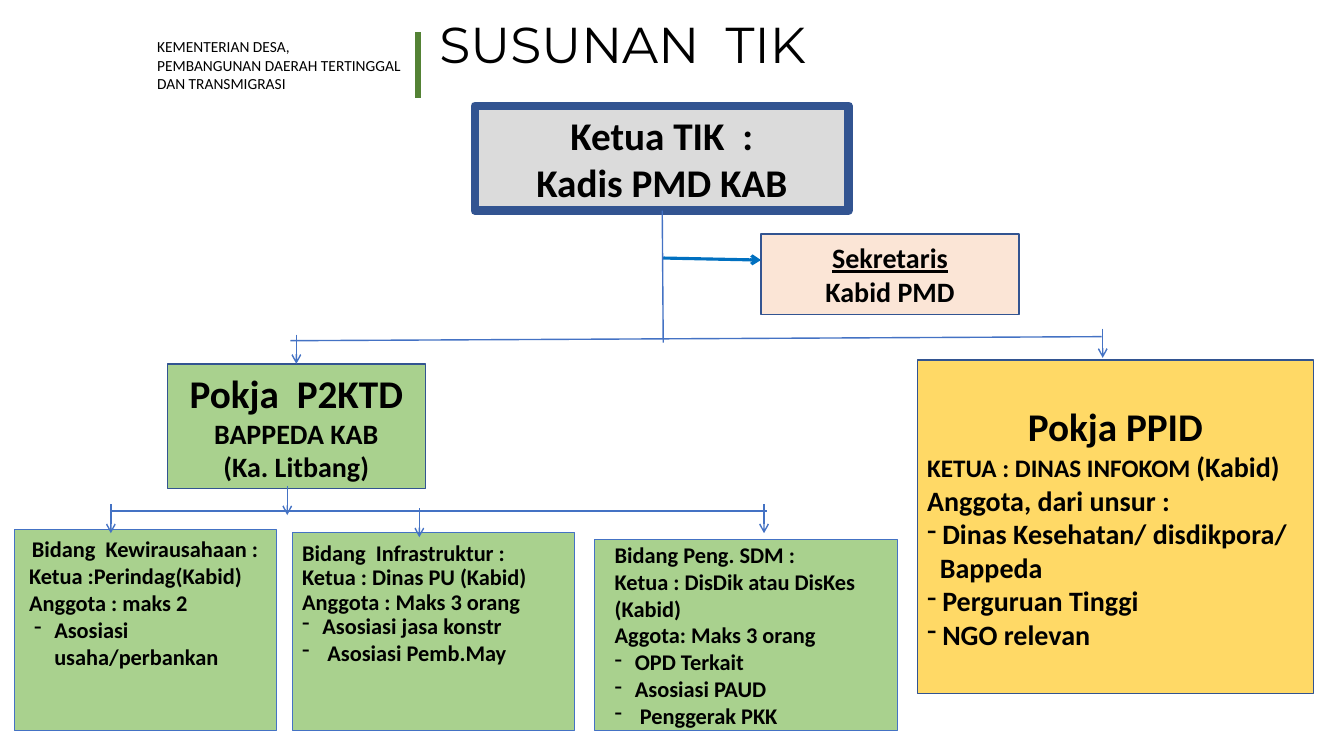
"""Build the TIK organisation chart slide."""
from lxml.etree import SubElement
from pptx import Presentation
from pptx.dml.color import RGBColor
from pptx.enum.shapes import MSO_CONNECTOR, MSO_SHAPE
from pptx.enum.text import MSO_ANCHOR, MSO_AUTO_SIZE, PP_ALIGN
from pptx.oxml.ns import qn
from pptx.util import Inches, Pt

RECTANGLE = MSO_SHAPE.RECTANGLE
STRAIGHT = MSO_CONNECTOR.STRAIGHT
MIDDLE = MSO_ANCHOR.MIDDLE
LEFT, CENTER = PP_ALIGN.LEFT, PP_ALIGN.CENTER

BLACK = RGBColor(0x00, 0x00, 0x00)
GRAY = RGBColor(0xDB, 0xDB, 0xDB)
PEACH = RGBColor(0xFB, 0xE5, 0xD6)
YELLOW = RGBColor(0xFF, 0xD9, 0x66)
GREEN = RGBColor(0xA9, 0xD1, 0x8E)
DARK_GREEN = RGBColor(0x54, 0x82, 0x35)
NAVY = RGBColor(0x32, 0x54, 0x91)
BLUE = RGBColor(0x44, 0x72, 0xC4)
BRIGHT_BLUE = RGBColor(0x00, 0x70, 0xC0)

deck = Presentation()
deck.slide_width, deck.slide_height = Inches(13.333), Inches(7.5)
COL = deck.slide_width / 40
ROW = deck.slide_height / 30
slide = deck.slides.add_slide(deck.slide_layouts[5])


def write(frame, text, size=16, font="Calibri", bold=True, underline=False,
          align=LEFT, indent=0, hang=0, spacing=1.0, bullet=False, join=False):
    """Add a paragraph, or a run joined to the last paragraph."""
    paragraph = frame.paragraphs[-1]
    if paragraph.runs and not join:
        paragraph = frame.add_paragraph()
    if not join:
        paragraph.alignment = align
        paragraph.line_spacing = spacing
        properties = paragraph._p.get_or_add_pPr()
        properties.set("marL", str(int(indent * COL)))
        properties.set("indent", str(int(-hang * COL)))
        if bullet:
            SubElement(properties, qn("a:buChar"), char="-")
    run = paragraph.add_run()
    run.text = text
    run.font.size = Pt(size)
    run.font.name = font
    run.font.bold = bold
    run.font.underline = underline
    run.font.color.rgb = BLACK


title = slide.shapes.title
title.left, title.top = int(12.39 * COL), int(0.64 * ROW)
title.width, title.height = int(26.7 * COL), int(2.44 * ROW)
title.text_frame.auto_size = MSO_AUTO_SIZE.NONE
title.text_frame.vertical_anchor = MIDDLE
write(title.text_frame, "SUSUNAN  TIK", size=36, font="Montserrat", bold=False,
      indent=0.39, spacing=0.9)

ministry = slide.shapes.add_textbox(
    int(4.38 * COL), int(1.28 * ROW), int(8.04 * COL), int(2.64 * ROW)).text_frame
ministry.word_wrap = True
for name in ("KEMENTERIAN DESA,", "PEMBANGUNAN DAERAH TERTINGGAL DAN TRANSMIGRASI"):
    write(ministry, name, size=11, bold=False)

HEADING = dict(size=28, align=CENTER)
ROLE = dict(size=20, align=CENTER)
MEMBER = dict(size=20)
MEMBER_ITEM = dict(size=20, indent=0.45, hang=0.45, bullet=True)
TIGHT = dict(spacing=0.9)
ITEM = dict(indent=0.9, hang=0.6, bullet=True)
FLUSH_ITEM = dict(indent=0.6, hang=0.6, bullet=True)

boxes = [
    ((14.13, 4.2, 11.13, 4.16), GRAY, NAVY, 6, 0.2, [
        ("Ketua TIK  :", HEADING),
        ("Kadis PMD KAB", HEADING)]),
    ((22.65, 9.28, 7.68, 3.2), PEACH, NAVY, 1, 0.2, [
        ("Sekretaris", dict(ROLE, underline=True)),
        ("Kabid PMD", ROLE)]),
    ((27.3, 14.28, 11.79, 13.24), YELLOW, NAVY, 1, 0.2, [
        ("Pokja PPID", HEADING),
        ("KETUA : DINAS INFOKOM ", dict(size=18)),
        ("(Kabid)", dict(size=20, join=True)),
        ("Anggota, dari unsur :", MEMBER),
        ("Dinas Kesehatan/ disdikpora/", MEMBER_ITEM),
        ("Bappeda", dict(size=20, indent=0.38)),
        ("Perguruan Tinggi", MEMBER_ITEM),
        ("NGO relevan", MEMBER_ITEM)]),
    ((4.98, 14.44, 7.68, 4.96), GREEN, NAVY, 1, 0.2, [
        ("Pokja  P2KTD", HEADING),
        ("BAPPEDA KAB", ROLE),
        ("(Ka. Litbang)", ROLE)]),
    ((0.42, 21, 7.8, 8), GREEN, BLUE, 0.5, 2.36, [
        ("Bidang  Kewirausahaan :", dict(align=CENTER)),
        ("Ketua :Perindag(Kabid)", dict(indent=0.15)),
        ("Anggota : maks 2", dict(indent=0.15)),
        ("Asosiasi usaha/perbankan", ITEM)]),
    ((8.7, 21.12, 8.4, 7.88), GREEN, BLUE, 0.5, 2.36, [
        ("Bidang  Infrastruktur :", TIGHT),
        ("Ketua : Dinas PU (Kabid)", TIGHT),
        ("Anggota : Maks 3 orang", TIGHT),
        ("Asosiasi jasa konstr", dict(FLUSH_ITEM, spacing=0.9)),
        ("Asosiasi Pemb.May", dict(FLUSH_ITEM, indent=0.75, hang=0.75))]),
    ((17.7, 21.4, 9, 7.6), GREEN, BLUE, 0.5, 0.2, [
        ("Bidang Peng. SDM :", dict(indent=0.3)),
        ("Ketua : DisDik atau DisKes (Kabid)", dict(indent=0.3)),
        ("Aggota: Maks 3 orang", dict(indent=0.3)),
        ("OPD Terkait", ITEM),
        ("Asosiasi PAUD", ITEM),
        ("Penggerak PKK", dict(ITEM, indent=1.05, hang=0.75))]),
]
for (left, top, width, height), fill, border, weight, foot, lines in boxes:
    box = slide.shapes.add_shape(
        RECTANGLE, int(left * COL), int(top * ROW), int(width * COL), int(height * ROW))
    box.shadow.inherit = False
    box.fill.solid()
    box.fill.fore_color.rgb = fill
    box.line.color.rgb = border
    box.line.width = Pt(weight)
    box.text_frame.word_wrap = True
    box.text_frame.vertical_anchor = MIDDLE
    box.text_frame.margin_bottom = int(foot * ROW)
    for text, style in lines:
        write(box.text_frame, text, **style)

DROP = 1.16
drops = [(8.82, 13.28), (32.82, 13.04), (22.74, 20), (12.48, 20.16), (3.3, 20), (8.55, 19.28)]
links = [
    ((12.45, 1.28, 12.45, 3.88), DARK_GREEN, 4.5, False),
    ((19.74, 10.24, 22.65, 10.32), BRIGHT_BLUE, 2.25, True),
    ((8.64, 13.52, 32.79, 13.36), BLUE, 1, False),
    ((19.74, 13.6, 19.71, 8.36), BLUE, 1, False),
    ((3.27, 20.28, 22.83, 20.28), BLUE, 1, False),
]
links += [((x, y, x, y + DROP), BLUE, 1, True) for x, y in drops]
for (x1, y1, x2, y2), color, weight, arrow in links:
    link = slide.shapes.add_connector(
        STRAIGHT, int(x1 * COL), int(y1 * ROW), int(x2 * COL), int(y2 * ROW))
    link.line.color.rgb = color
    link.line.width = Pt(weight)
    if arrow:
        SubElement(link.line._get_or_add_ln(), qn("a:tailEnd"), type="arrow")
    SubElement(link._element.spPr, qn("a:effectLst"))

deck.save("out.pptx")
